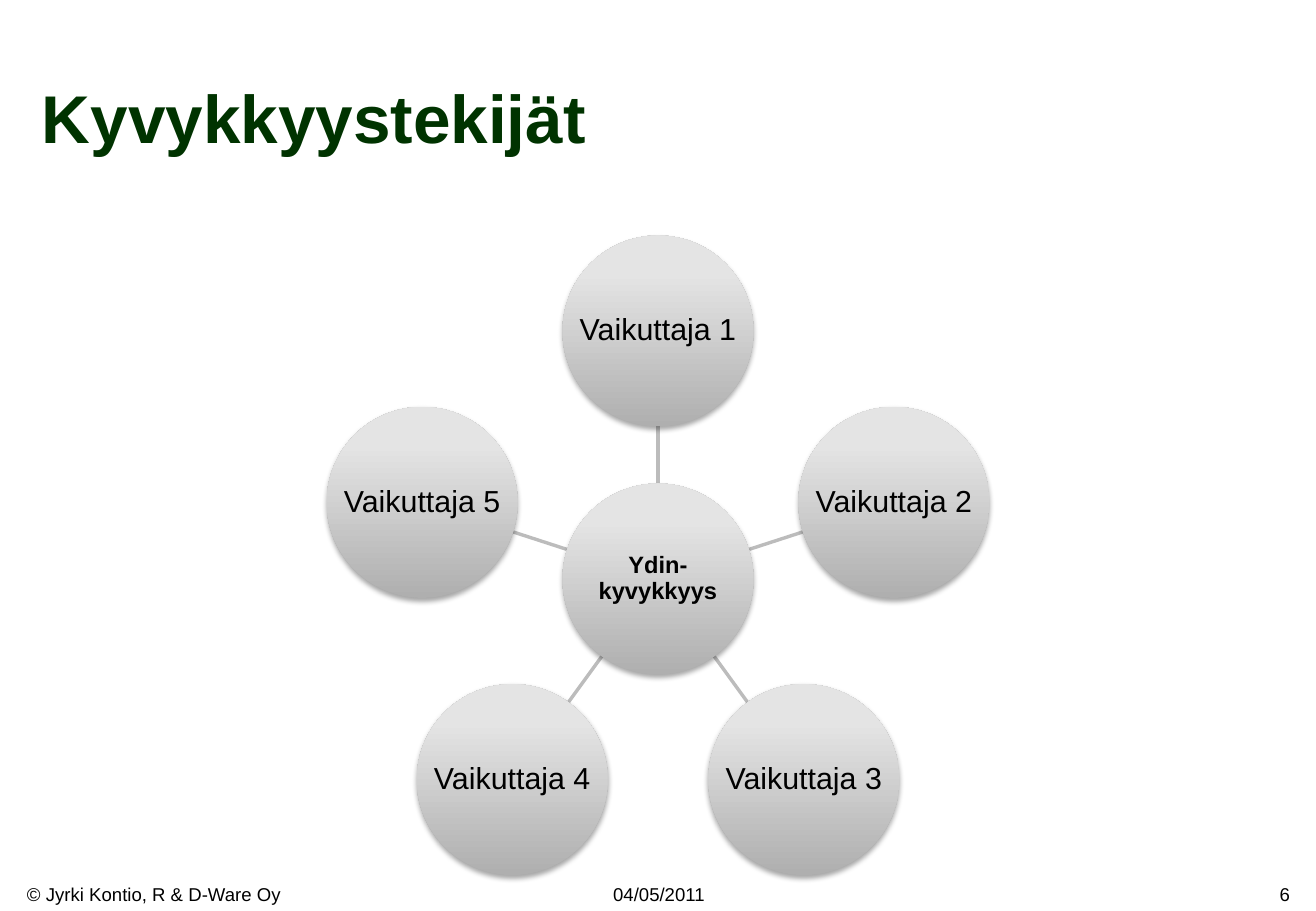
import math

import lxml.etree
import pptx
import pptx.dml.color
import pptx.enum.shapes
import pptx.enum.text
import pptx.oxml
import pptx.util

PX = 914400 / 121.5
ALIGN = pptx.enum.text.PP_ALIGN
ANCHOR = pptx.enum.text.MSO_ANCHOR
NAMESPACE = "http://schemas.openxmlformats.org/drawingml/2006/main"
SHADOW = f"""<a:effectLst xmlns:a="{NAMESPACE}">
<a:outerShdw blurRad="40000" dist="23000" dir="5400000" rotWithShape="0">
<a:srgbClr val="000000"><a:alpha val="35000"/></a:srgbClr>
</a:outerShdw></a:effectLst>"""


def color(value):
    return pptx.dml.color.RGBColor.from_string(value)


def write(shape, text, size, value, alignment, anchor, bold=False):
    frame = shape.text_frame
    frame.word_wrap = False
    frame.vertical_anchor = anchor
    frame.text = text
    paragraph = frame.paragraphs[0]
    paragraph.alignment = alignment
    paragraph.font.name = "Arial"
    paragraph.font.size = pptx.util.Pt(size)
    paragraph.font.bold = bold
    paragraph.font.color.rgb = color(value)
    return paragraph


presentation = pptx.Presentation()
presentation.slide_width = round(1316 * PX)
presentation.slide_height = round(911 * PX)
slide = presentation.slides.add_slide(presentation.slide_layouts[6])

texts = [
    ("© Jyrki Kontio, R & D-Ware Oy", (15, 877, 281, 34), 11, "000000", ALIGN.LEFT, ANCHOR.MIDDLE, False),
    ("04/05/2011", (600, 877, 118, 34), 11, "000000", ALIGN.CENTER, ANCHOR.MIDDLE, False),
    ("6", (1255, 877, 47, 34), 11, "000000", ALIGN.RIGHT, ANCHOR.MIDDLE, False),
    ("Kyvykkyystekijät", (30, 10, 1033, 153), 40, "003300", ALIGN.LEFT, ANCHOR.BOTTOM, True),
]
for text, place, size, value, alignment, anchor, bold in texts:
    box = slide.shapes.add_textbox(*(round(length * PX) for length in place))
    write(box, text, size, value, alignment, anchor, bold)

CENTER_X, CENTER_Y = 658, 579
DIAMETER, ORBIT, FACTORS = 191, 248, 5

circles = [("Ydin-\vkyvykkyys", CENTER_X, CENTER_Y, 14, True)]
for index in range(FACTORS):
    angle = math.tau * index / FACTORS
    across, up = math.sin(angle), math.cos(angle)
    circles.append((f"Vaikuttaja {index + 1}", CENTER_X + ORBIT * across, CENTER_Y - ORBIT * up, 18, False))
    ends = []
    for distance in (DIAMETER / 2, ORBIT - DIAMETER / 2):
        ends += [round((CENTER_X + distance * across) * PX), round((CENTER_Y - distance * up) * PX)]
    spoke = slide.shapes.add_connector(pptx.enum.shapes.MSO_CONNECTOR.STRAIGHT, *ends)
    spoke.line.color.rgb = color("BCBCBC")
    spoke.line.width = pptx.util.Pt(2)
    lxml.etree.SubElement(spoke._element.spPr, f"{{{NAMESPACE}}}effectLst")

for text, x, y, size, bold in circles:
    circle = slide.shapes.add_shape(
        pptx.enum.shapes.MSO_SHAPE.OVAL,
        round((x - DIAMETER / 2) * PX),
        round((y - DIAMETER / 2) * PX),
        round(DIAMETER * PX),
        round(DIAMETER * PX),
    )
    circle.fill.gradient()
    circle.fill.gradient_angle = 90
    for stop, position, value in zip(circle.fill.gradient_stops, (0, 0.8), ("AFAFAF", "E4E4E4")):
        stop.position = position
        stop.color.rgb = color(value)
    circle.line.fill.background()
    circle._element.spPr.append(pptx.oxml.parse_xml(SHADOW))
    frame = circle.text_frame
    frame.margin_left = frame.margin_right = frame.margin_top = frame.margin_bottom = round(PX)
    paragraph = write(circle, text, size, "000000", ALIGN.CENTER, ANCHOR.MIDDLE, bold)
    paragraph.line_spacing = 0.9

presentation.save("out.pptx")
